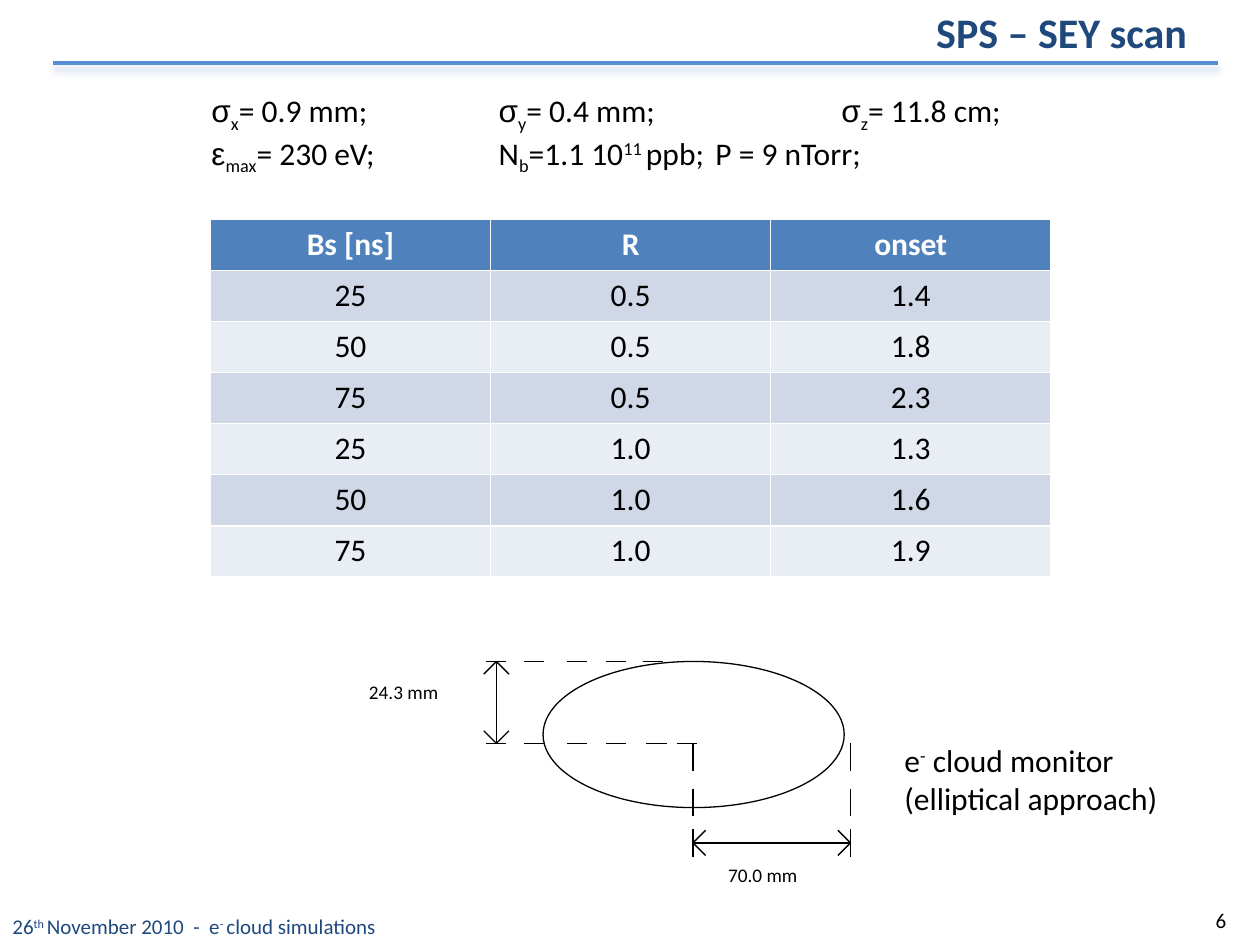
from lxml.etree import SubElement
from pptx import Presentation
from pptx.dml.color import RGBColor
from pptx.enum.shapes import MSO_CONNECTOR, MSO_SHAPE
from pptx.enum.text import MSO_ANCHOR, PP_ALIGN
from pptx.oxml.ns import qn
from pptx.util import Inches, Pt

COLORS = {"black": "000000", "white": "FFFFFF", "navy": "1F497D", "rule": "558ED5",
          "shadow": "95B3D7", "header": "4F81BD", "odd": "D0D8E8", "even": "E9EDF4"}
SUB, SUPER = -25, 30

TITLE = "SPS – SEY scan"
FOOTER = [("26",), ("th ", SUPER), ("November 2010  -  e",), ("- ", SUPER),
          ("cloud simulations",)]
MONITOR = [("e",), ("-", SUPER), (" cloud monitor (elliptical approach)",)]
PARAMETERS = [
    [("σ", 0, "Arial"), ("x", SUB), ("= 0.9 mm;\t",), ("σ", 0, "Arial"), ("y", SUB),
     ("= 0.4 mm;\t",), ("σ", 0, "Arial"), ("z", SUB), ("= 11.8 cm;",)],
    [("ε", 0, "Arial"), ("max", SUB), ("= 230 eV;\tN",), ("b", SUB), ("=1.1 10",),
     ("11 ", SUPER), ("ppb;\tP = 9 nTorr;",)],
]
PARAMETER_TABS = [(2.28, 5), (2.28, 4)]
SCAN = [("Bs [ns]", "R", "onset"),
        ("25", "0.5", "1.4"), ("50", "0.5", "1.8"), ("75", "0.5", "2.3"),
        ("25", "1.0", "1.3"), ("50", "1.0", "1.6"), ("75", "1.0", "1.9")]

TOP, MIDDLE, CENTER, EDGE = 5.25, 5.9, 5.5, 6.75
HEIGHT_X, WIDTH_Y, BARB = 3.94, 6.69, 0.1
DASHES_ACROSS = {TOP: (3.86, 4.16, 4.5, 4.81, 5.1),
                 MIDDLE: (3.86, 4.16, 4.5, 4.81, 5.13, 5.37)}
DASHES_DOWN = (5.9, 6.26, 6.58)
DASH_WIDTH, DASH_HEIGHT = 0.16, 0.22


def color(name):
    return RGBColor.from_string(COLORS[name])


def format_span(span, size, tint="black", bold=False, font="Calibri"):
    span.font.name, span.font.size, span.font.bold = font, Pt(size), bold
    span.font.color.rgb = color(tint)


def add_spans(para, pieces, size, tint="black"):
    for text, baseline, font in ((*piece, 0, "Calibri")[:3] if len(piece) != 2
                                 else (*piece, "Calibri") for piece in pieces):
        span = para.add_run()
        span.text = text
        format_span(span, size, tint, font=font)
        if baseline:
            span.font._element.set("baseline", str(baseline * 1000))


def add_text(shapes, area, paragraphs, size, tint="black"):
    box = shapes.add_textbox(*map(Inches, area))
    frame = box.text_frame
    frame.word_wrap = True
    for index, pieces in enumerate(paragraphs):
        para = frame.add_paragraph() if index else frame.paragraphs[0]
        add_spans(para, pieces, size, tint)
    return frame


def add_line(shapes, x1, y1, x2, y2, tint="black", width=0.75):
    line = shapes.add_connector(MSO_CONNECTOR.STRAIGHT, *map(Inches, (x1, y1, x2, y2)))
    line.line.color.rgb, line.line.width = color(tint), Pt(width)
    return SubElement(line._element.spPr, qn("a:effectLst"))


def add_header(slide):
    effects = add_line(slide.shapes, 0.42, 0.5, 9.67, 0.5, "rule", 2.75)
    shadow = SubElement(effects, qn("a:outerShdw"), blurRad=str(Pt(4)), dist=str(Pt(3)),
                        dir="5400000", rotWithShape="0")
    tint = SubElement(shadow, qn("a:srgbClr"), val=COLORS["shadow"])
    SubElement(tint, qn("a:alpha"), val="40000")
    title = slide.shapes.title
    title.left, title.top, title.width, title.height = map(Inches, (7.33, 0, 2.58, 0.5))
    frame = title.text_frame
    frame.text, frame.vertical_anchor = TITLE, MSO_ANCHOR.TOP
    frame.paragraphs[0].alignment = PP_ALIGN.LEFT
    format_span(frame.paragraphs[0].runs[0], 24, "navy", True)


def add_parameters(slide):
    frame = add_text(slide.shapes, (1.58, 0.67, 6.92, 1.01), PARAMETERS, 18)
    for para, stops in zip(frame.paragraphs, PARAMETER_TABS):
        tabs = SubElement(para._p.get_or_add_pPr(), qn("a:tabLst"))
        for stop in stops:
            SubElement(tabs, qn("a:tab"), pos=str(Inches(stop)), algn="l")


def add_scan_table(slide):
    table = slide.shapes.add_table(len(SCAN), len(SCAN[0]), *map(
        Inches, (1.67, 1.74, 6.67, 2.84))).table
    for row, values in enumerate(SCAN):
        fill = "header" if row == 0 else "odd" if row % 2 else "even"
        for column, value in enumerate(values):
            cell = table.cell(row, column)
            cell.margin_left = cell.margin_right = Inches(0.07)
            cell.margin_top = cell.margin_bottom = 0
            cell.fill.solid()
            cell.fill.fore_color.rgb = color(fill)
            para = cell.text_frame.paragraphs[0]
            para.text, para.alignment, para.line_spacing = value, PP_ALIGN.CENTER, 1.15
            format_span(para.runs[0], 18, "black" if row else "white", row == 0)


def add_dimension(shapes, start, end):
    add_line(shapes, *start, *end)
    vertical = start[0] == end[0]
    for (x, y), inward in ((start, BARB), (end, -BARB)):
        for side in (-BARB, BARB):
            dx, dy = (side, inward) if vertical else (inward, side)
            add_line(shapes, x, y, x + dx, y + dy)


def add_monitor_drawing(slide):
    shapes = slide.shapes.add_group_shape().shapes
    chamber = shapes.add_shape(MSO_SHAPE.OVAL, *map(Inches, (4.31, 5.25, 2.39, 1.16)))
    chamber.shadow.inherit = False
    chamber.fill.solid()
    chamber.fill.fore_color.rgb = color("white")
    chamber.line.color.rgb, chamber.line.width = color("black"), Pt(0.75)
    add_dimension(shapes, (HEIGHT_X, TOP), (HEIGHT_X, MIDDLE))
    add_dimension(shapes, (CENTER, WIDTH_Y), (EDGE, WIDTH_Y))
    for y, starts in DASHES_ACROSS.items():
        for x in starts:
            add_line(shapes, x, y, x + DASH_WIDTH, y)
    for x in (CENTER, EDGE):
        for y in DASHES_DOWN:
            add_line(shapes, x, y, x, y + DASH_HEIGHT)
    for label, left, top in (("24.3 mm", 2.83, 5.35), ("70.0 mm", 5.68, 6.8)):
        frame = add_text(shapes, (left, top, 1.03, 0.37), [[(label,)]], 11)
        frame.paragraphs[0].space_after = Pt(10)


def main():
    """Build the SEY scan slide and save it."""
    deck = Presentation()
    deck.slide_width, deck.slide_height = Inches(10), Inches(7.5)
    slide = deck.slides.add_slide(deck.slide_layouts[5])
    number = add_text(slide.shapes, (7.5, 7.1, 2.33, 0.4), [[("6",)]], 12)
    number.vertical_anchor = MSO_ANCHOR.MIDDLE
    number.paragraphs[0].alignment = PP_ALIGN.RIGHT
    add_header(slide)
    add_text(slide.shapes, (0, 7.2, 9.42, 0.3), [FOOTER], 12, "navy")
    add_scan_table(slide)
    add_monitor_drawing(slide)
    add_text(slide.shapes, (7.08, 5.83, 2.75, 0.71), [MONITOR], 18)
    add_parameters(slide)
    deck.save("out.pptx")


if __name__ == "__main__":
    main()
